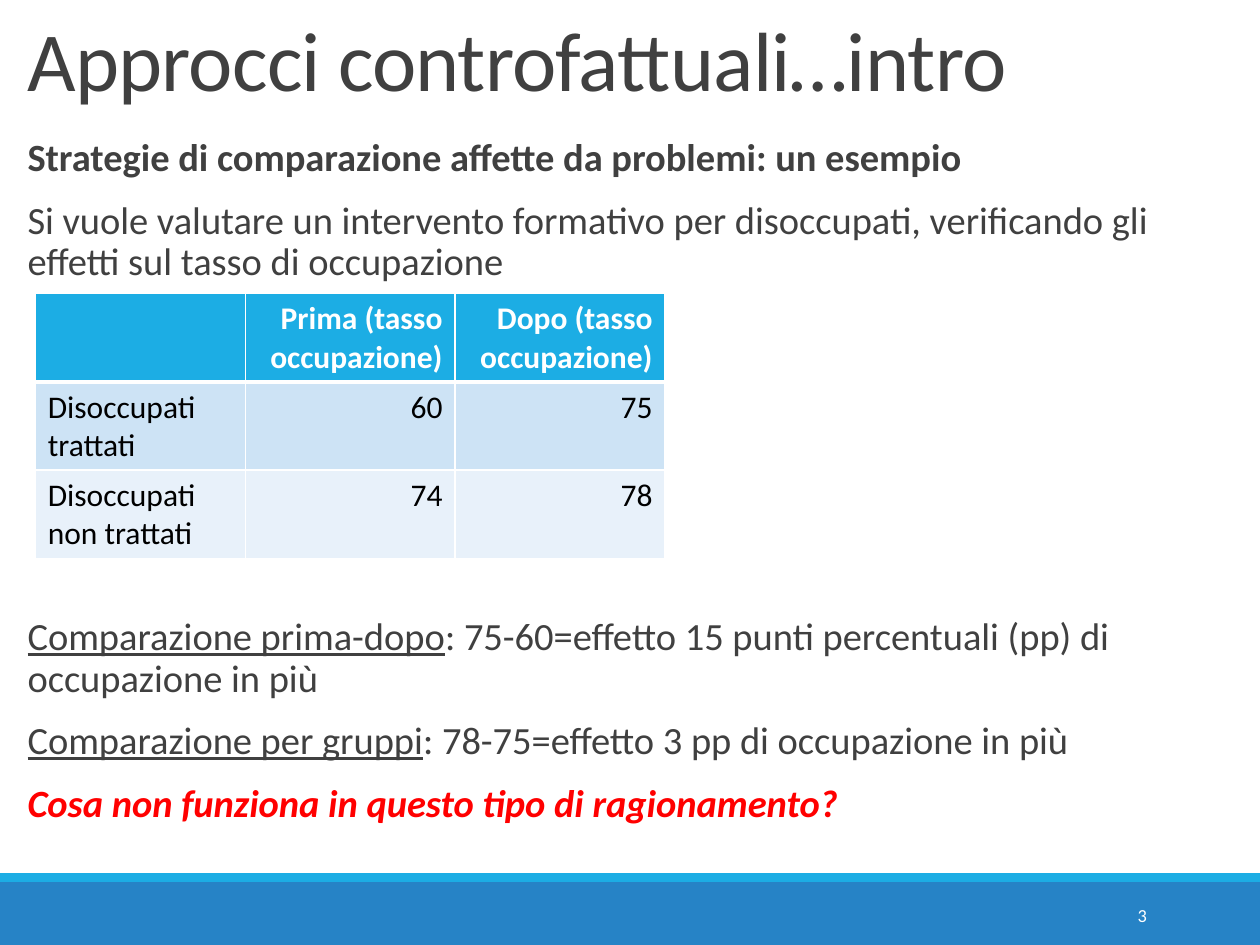
import pptx
import pptx.util
import pptx.dml.color
import pptx.enum.shapes
import pptx.enum.text
from dataclasses import dataclass
from lxml import etree

Pt = pptx.util.Pt
ALIGN = pptx.enum.text.PP_ALIGN
ANCHOR = pptx.enum.text.MSO_ANCHOR
DRAW = "{http://schemas.openxmlformats.org/drawingml/2006/main}"


@dataclass
class Theme:
    font: str = "Calibri"
    # Colours
    ink: str = "404040"
    black: str = "000000"
    white: str = "FFFFFF"
    red: str = "FF0000"
    blue: str = "2683C6"
    sky: str = "1CADE4"
    rows: tuple = ("CDE3F5", "E8F1FA")
    # Type sizes
    title: float = 48
    body: float = 22
    cell: float = 18
    page: float = 10.5


def rgb(code):
    return pptx.dml.color.RGBColor.from_string(code)


class Deck:
    """Style and current slide; lengths are in a grid of 100 by 75 units."""

    def __init__(self, theme):
        self.theme = theme
        self.prs = pptx.Presentation()
        self.prs.slide_width = pptx.util.Inches(10)
        self.prs.slide_height = pptx.util.Inches(7.5)
        self.slide = self.prs.slides.add_slide(self.prs.slide_layouts[5])

    def grid(self, *units):
        return [round(u * self.prs.slide_width / 100) for u in units]

    def style(self, para, size, color, bold=False, italic=False, align=ALIGN.LEFT):
        font = para.font
        font.name, font.size = self.theme.font, Pt(size)
        font.bold, font.italic = bold, italic
        font.color.rgb = rgb(color)
        para.alignment = align

    def title(self, text, box):
        shape = self.slide.shapes.title
        shape.left, shape.top, shape.width, shape.height = self.grid(*box)
        frame = shape.text_frame
        frame.auto_size = pptx.enum.text.MSO_AUTO_SIZE.NONE
        frame.vertical_anchor = ANCHOR.BOTTOM
        para = frame.paragraphs[0]
        run = para.add_run()
        run.text = text
        run.font._element.set("spc", "-50")
        para.line_spacing = 0.85
        self.style(para, self.theme.title, self.theme.ink)

    def band(self, box, color):
        shape = self.slide.shapes.add_shape(
            pptx.enum.shapes.MSO_SHAPE.RECTANGLE, *self.grid(*box))
        shape.shadow.inherit = False
        shape.fill.solid()
        shape.fill.fore_color.rgb = rgb(color)
        shape.line.fill.background()

    def frame(self, box):
        frame = self.slide.shapes.add_textbox(*self.grid(*box)).text_frame
        frame.word_wrap = True
        return frame

    def body(self, paras, box):
        """Each entry is (underlined lead, text, extra style)."""
        frame = self.frame(box)
        frame.margin_right = 0
        for i, (lead, text, extra) in enumerate(paras):
            para = frame.add_paragraph() if i else frame.paragraphs[0]
            if lead:
                run = para.add_run()
                run.text, run.font.underline = lead, True
            para.add_run().text = text
            para.line_spacing, para.space_after = 0.9, Pt(12)
            self.style(para, self.theme.body, **{"color": self.theme.ink, **extra})

    def page(self, text, box):
        frame = self.frame(box)
        frame.vertical_anchor = ANCHOR.MIDDLE
        frame.text = text
        self.style(frame.paragraphs[0], self.theme.page, self.theme.white,
                   align=ALIGN.RIGHT)

    def border(self, cell, side, width):
        line = etree.SubElement(cell._tc.get_or_add_tcPr(), DRAW + "ln" + side,
                                w=str(Pt(width)))
        fill = etree.SubElement(line, DRAW + "solidFill")
        etree.SubElement(fill, DRAW + "srgbClr", val=self.theme.white)

    def table(self, data, box):
        theme = self.theme
        table = self.slide.shapes.add_table(
            len(data), len(data[0]), *self.grid(*box)).table
        for r, row in enumerate(data):
            head = r == 0
            for c, text in enumerate(row):
                cell = table.cell(r, c)
                for side in "LRTB":
                    thick = (head and side == "B") or (r == 1 and side == "T")
                    self.border(cell, side, 3 if thick else 1)
                cell.fill.solid()
                cell.fill.fore_color.rgb = rgb(theme.sky if head else theme.rows[r - 1])
                cell.text = text
                self.style(cell.text_frame.paragraphs[0], theme.cell,
                           theme.white if head else theme.black, bold=head,
                           align=ALIGN.RIGHT if c else ALIGN.LEFT)


def main():
    theme = Theme()
    deck = Deck(theme)

    # Footer bands and page number
    deck.band((0, 70, 100, 5), theme.blue)
    deck.band((0, 69.3, 100, 0.7), theme.sky)
    deck.page("3", (81.2, 70.6, 10.8, 4))

    # Title and premise
    deck.title("Approcci controfattuali…intro", (1.2, 0.5, 82.5, 8.6))
    deck.body([
        ("", "Strategie di comparazione affette da problemi: un esempio",
         {"bold": True}),
        ("", "Si vuole valutare un intervento formativo per disoccupati, "
             "verificando gli effetti sul tasso di occupazione", {}),
    ], (1.2, 10.5, 94.5, 12.5))

    # Employment rates
    deck.table([
        ("", "Prima (tasso occupazione)", "Dopo (tasso occupazione)"),
        ("Disoccupati trattati", "60", "75"),
        ("Disoccupati non trattati", "74", "78"),
    ], (2.8, 23.3, 50, 21))

    # Comparisons and closing question
    deck.body([
        ("Comparazione prima-dopo",
         ": 75-60=effetto 15 punti percentuali (pp) di occupazione in più", {}),
        ("Comparazione per gruppi",
         ": 78-75=effetto 3 pp di occupazione in più", {}),
        ("", "Cosa non funziona in questo tipo di ragionamento?",
         {"color": theme.red, "bold": True, "italic": True}),
    ], (1.2, 48.5, 94.5, 19.7))

    deck.prs.save("out.pptx")


if __name__ == "__main__":
    main()
